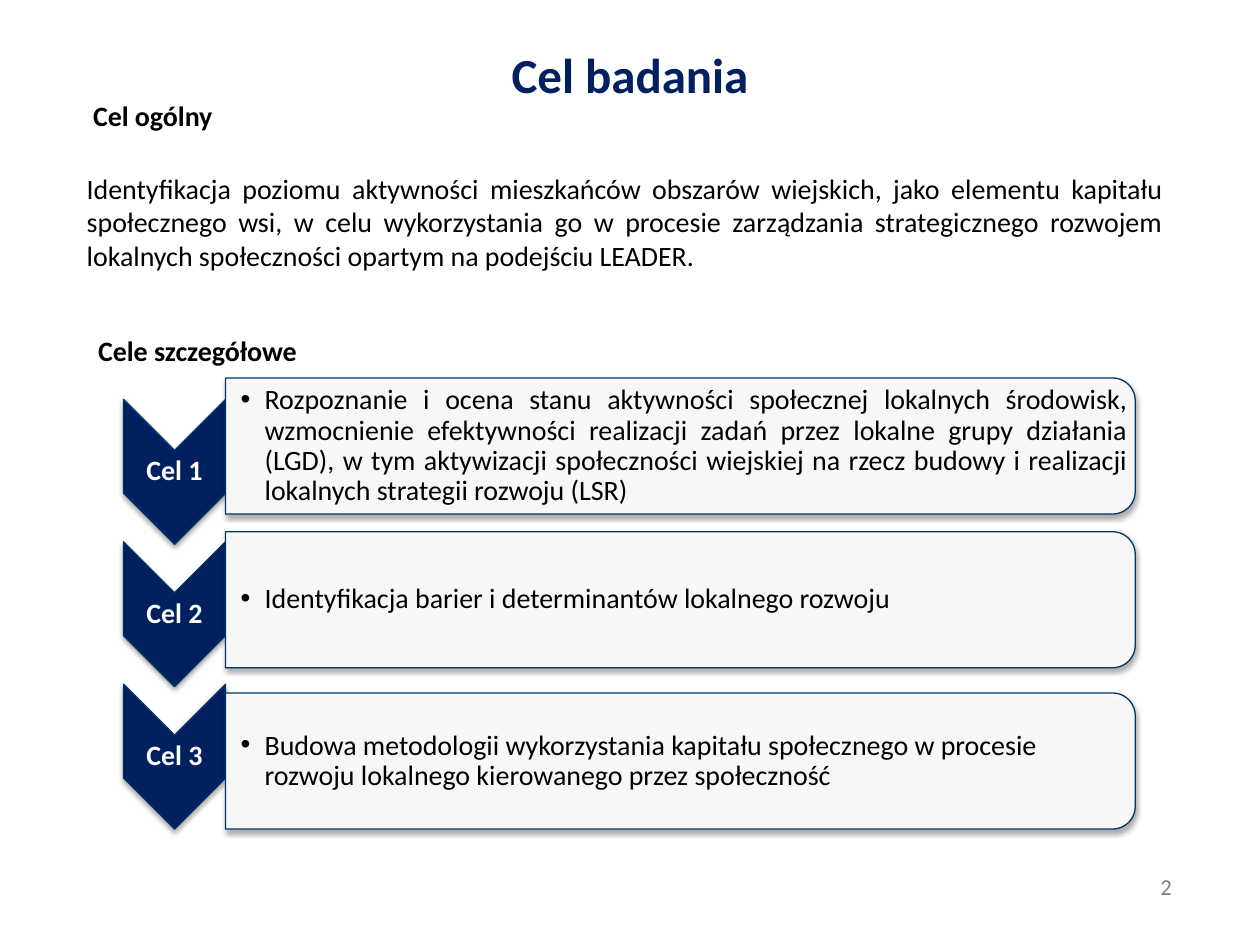
import pptx
import pptx.util
import pptx.dml.color
import pptx.enum.shapes
import pptx.enum.text
import pptx.oxml
import pptx.oxml.ns

Inches, Pt = pptx.util.Inches, pptx.util.Pt
Align = pptx.enum.text.PP_ALIGN
Anchor = pptx.enum.text.MSO_ANCHOR
Shape = pptx.enum.shapes.MSO_SHAPE
NS = pptx.oxml.ns.nsdecls("a")
NAVY, EDGE, BLACK, WHITE, GREY = "002060", "013565", "000000", "FFFFFF", "808080"

GOALS = [
    ("Cel 1", "Rozpoznanie i ocena stanu aktywności społecznej lokalnych środowisk, "
     "wzmocnienie efektywności realizacji zadań przez lokalne grupy działania (LGD), "
     "w tym aktywizacji społeczności wiejskiej na rzecz budowy i realizacji "
     "lokalnych strategii rozwoju (LSR)", 3.0, Align.JUSTIFY),
    ("Cel 2", "Identyfikacja barier i determinantów lokalnego rozwoju", 4.22, Align.LEFT),
    ("Cel 3", "Budowa metodologii wykorzystania kapitału społecznego w procesie "
     "rozwoju lokalnego kierowanego przez społeczność", 5.5, Align.LEFT),
]


def color(code):
    return pptx.dml.color.RGBColor.from_string(code)


def xml(text):
    return pptx.oxml.parse_xml(text)


def style(para, size=16, code=BLACK, bold=False, align=Align.LEFT):
    para.alignment = align
    font = para.font
    font.name, font.size, font.bold = "Calibri", Pt(size), bold
    font.color.rgb = color(code)


def add_text(slide, box, text, wrap=True, **look):
    frame = slide.shapes.add_textbox(*map(Inches, box)).text_frame
    frame.word_wrap = wrap
    para = frame.paragraphs[0]
    para.text = text
    style(para, **look)
    return frame


def pad(frame, left=0.01):
    """Centre the text vertically in tight margins."""
    frame.vertical_anchor = Anchor.MIDDLE
    frame.margin_left = Inches(left)
    frame.margin_top = frame.margin_right = frame.margin_bottom = Inches(0.01)
    frame.paragraphs[0].line_spacing = 0.9


def add_turned(slide, kind, box, fill, alpha=100):
    """Place a shape turned by 90 degrees so that it covers the box."""
    left, top, width, height = box
    shift = (width - height) / 2
    shape = slide.shapes.add_shape(
        kind, Inches(left + shift), Inches(top - shift), Inches(height), Inches(width))
    shape.rotation = 90
    shape.fill.solid()
    shape.fill.fore_color.rgb = color(fill)
    props = shape._element.spPr
    if alpha < 100:
        tint = props.find(".//" + pptx.oxml.ns.qn("a:srgbClr"))
        tint.append(xml(f'<a:alpha {NS} val="{alpha * 1000}"/>'))
    shape.line.color.rgb = color(EDGE)
    shape.line.width = Pt(0.75)
    # Soft shadow below
    shape.shadow.inherit = False
    props.find(pptx.oxml.ns.qn("a:effectLst")).append(xml(
        f'<a:outerShdw {NS} blurRad="{Pt(3.1)}" dist="{Pt(1.8)}" dir="5400000" '
        'rotWithShape="0"><a:srgbClr val="000000"><a:alpha val="35000"/>'
        '</a:srgbClr></a:outerShdw>'))


def add_tag(slide, box, label):
    left, top, width, height = box
    add_turned(slide, Shape.CHEVRON, box, NAVY)
    frame = add_text(slide, (left, top + 0.4, width, height - 0.8), label,
                     code=WHITE, bold=True, align=Align.CENTER)
    pad(frame)


def add_panel(slide, box, text, align):
    left, top, width, height = box
    add_turned(slide, Shape.ROUND_2_SAME_RECTANGLE, box, WHITE, 90)
    frame = add_text(slide, (left, top + 0.05, width - 0.05, height - 0.1), "")
    pad(frame, 0.12)
    para = frame.paragraphs[0]
    para.text = text
    # Bullet with hanging indent
    props = para._p.get_or_add_pPr()
    props.set("marL", str(Inches(0.19)))
    props.set("indent", str(-Inches(0.19)))
    for old in props.findall(pptx.oxml.ns.qn("a:defRPr")):
        props.remove(old)
    props.append(xml(f'<a:buFont {NS} typeface="Arial"/>'))
    props.append(xml(f'<a:buChar {NS} char="•"/>'))
    style(para, align=align)


def add_goals(slide, left, top):
    for row, (label, text, edge, align) in enumerate(GOALS):
        add_tag(slide, (left, top + row * 1.13, 0.81, 1.15), label)
        add_panel(slide, (left + 0.81, edge, 7.22, 1.08), text, align)


def add_title(slide, box, text):
    title = slide.shapes.title
    title.left, title.top, title.width, title.height = map(Inches, box)
    title.text = text
    title.text_frame.vertical_anchor = Anchor.TOP
    style(title.text_frame.paragraphs[0], 28, NAVY, True, Align.CENTER)


def main():
    deck = pptx.Presentation()
    deck.slide_width, deck.slide_height = Inches(10), Inches(7.5)
    slide = deck.slides.add_slide(deck.slide_layouts[5])
    add_title(slide, (0.5, 0.3, 9, 0.93), "Cel badania")
    # General goal
    add_text(slide, (0.64, 0.73, 1.21, 0.37), "Cel ogólny", wrap=False, bold=True)
    add_text(slide, (0.59, 1.31, 8.74, 0.91),
             "Identyfikacja poziomu aktywności mieszkańców obszarów wiejskich, jako "
             "elementu kapitału społecznego wsi, w celu wykorzystania go w procesie "
             "zarządzania strategicznego rozwojem lokalnych społeczności opartym na "
             "podejściu LEADER.", align=Align.JUSTIFY)
    # Detailed goals
    add_text(slide, (0.68, 2.6, 1.8, 0.37), "Cele szczegółowe", wrap=False, bold=True)
    add_goals(slide, 0.98, 3.17)
    # Page number
    add_text(slide, (8.86, 6.88, 0.79, 0.32), "2",
             size=13, code=GREY, align=Align.CENTER)
    deck.save("out.pptx")


if __name__ == "__main__":
    main()
